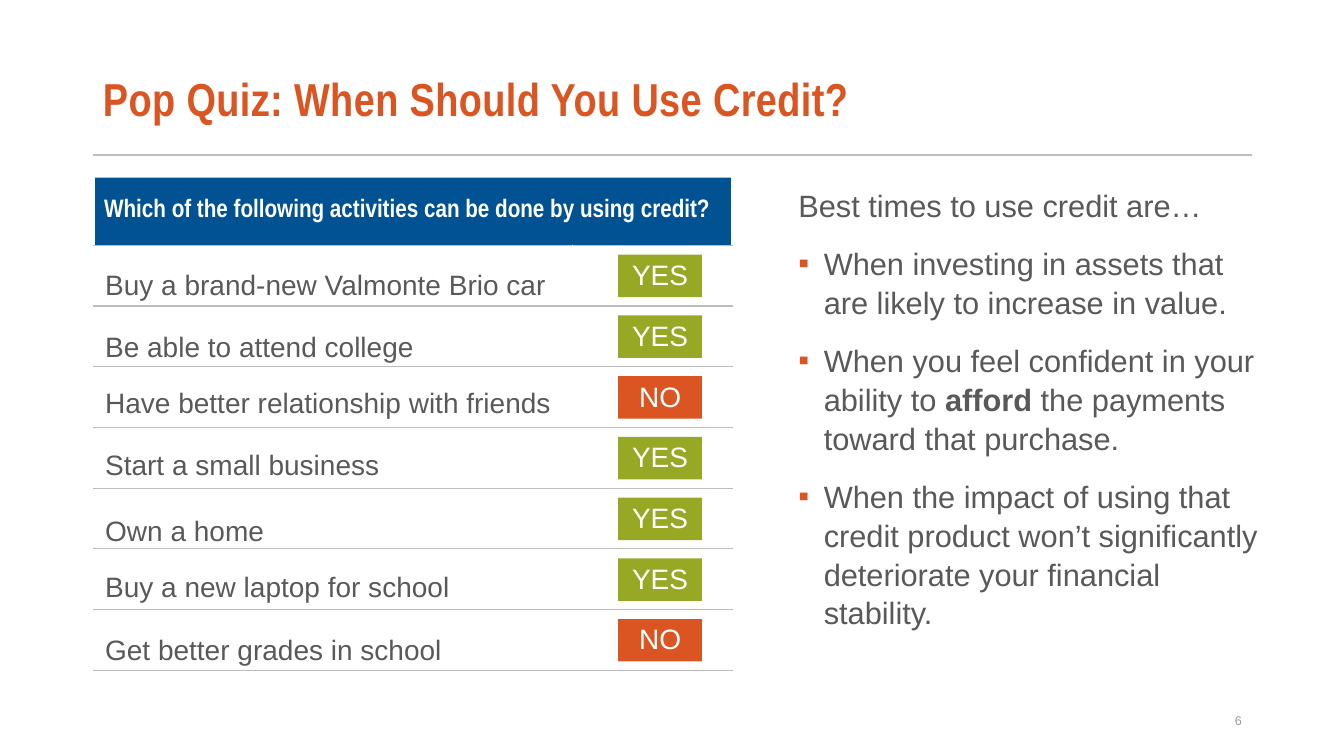
from collections import namedtuple

from lxml.etree import SubElement
from pptx import Presentation
from pptx.dml.color import RGBColor
from pptx.enum.shapes import MSO_CONNECTOR, MSO_SHAPE
from pptx.enum.text import MSO_ANCHOR, MSO_AUTO_SIZE, PP_ALIGN
from pptx.oxml.ns import qn
from pptx.util import Cm, Pt

ORANGE = RGBColor(0xDA, 0x55, 0x21)
GREEN = RGBColor(0x97, 0xA8, 0x25)
BLUE = RGBColor(0x00, 0x52, 0x93)
WHITE = RGBColor(0xFF, 0xFF, 0xFF)
TEXT_GRAY = RGBColor(0x59, 0x59, 0x59)
NUMBER_GRAY = RGBColor(0x9A, 0x9A, 0x9A)
LINE_GRAY = RGBColor(0xBD, 0xBD, 0xBD)

Box = namedtuple("Box", "left top width height")
Activity = namedtuple("Activity", "label answer drop")

TITLE_FONT = {"name": "Arial Narrow", "size": Pt(33), "bold": True}
HEADER_FONT = {"name": "Arial Narrow", "size": Pt(18), "bold": True}
LABEL_FONT = {"name": "Arial", "size": Pt(20)}
BODY_FONT = {"name": "Arial", "size": Pt(22)}
NUMBER_FONT = {"name": "Arial", "size": Pt(9)}

ANSWER_COLORS = {"YES": GREEN, "NO": ORANGE}
HEADER_HEIGHT = 1.71
ROW_HEIGHT = 1.53
QUESTION = "Which of the following activities can be done by using credit?"
ACTIVITIES = [
    Activity("Buy a brand-new Valmonte Brio car", "YES", 0.48),
    Activity("Be able to attend college", "YES", 0.53),
    Activity("Have better relationship with friends", "NO", 0.4),
    Activity("Start a small business", "YES", 0.44),
    Activity("Own a home", "YES", 0.56),
    Activity("Buy a new laptop for school", "YES", 0.45),
    Activity("Get better grades in school", "NO", 0.5),
]
BEST_TIMES = [
    ["When investing in assets that are likely to increase in value."],
    ["When you feel confident in your ability to ", "afford",
     " the payments toward that purchase."],
    ["When the impact of using that credit product won’t significantly "
     "deteriorate your financial stability."],
]


def set_values(target, values):
    """Set each named attribute of the target."""
    for name, value in values.items():
        setattr(target, name, value)


def lengths(box):
    """Give the sides of a box as slide lengths."""
    return [Cm(side) for side in box]


def move(shape, box):
    """Place a shape in a box."""
    set_values(shape, dict(zip(box._fields, lengths(box))))


def add_span(para, text, font, color):
    """Add formatted text to a paragraph."""
    span = para.add_run()
    span.text = text
    set_values(span.font, font)
    span.font.color.rgb = color
    return span


def add_label(page, box, text, font, color, **para_format):
    """Add a one-line text box."""
    frame = page.shapes.add_textbox(*lengths(box)).text_frame
    set_values(frame, {"word_wrap": True, "vertical_anchor": MSO_ANCHOR.MIDDLE})
    set_values(frame.paragraphs[0], para_format)
    add_span(frame.paragraphs[0], text, font, color)


def add_title(page, box):
    """Fill the title and draw the rule below it."""
    title = page.shapes.title
    move(title, box._replace(height=2.41))
    frame = title.text_frame
    set_values(frame, {"word_wrap": True, "auto_size": MSO_AUTO_SIZE.NONE,
                       "vertical_anchor": MSO_ANCHOR.MIDDLE})
    para = frame.paragraphs[0]
    set_values(para, {"alignment": PP_ALIGN.LEFT, "line_spacing": 0.87})
    span = add_span(para, "Pop Quiz: When Should You Use Credit?", TITLE_FONT, ORANGE)
    span.font._element.set("spc", "30")
    bottom = Cm(box.top + box.height)
    rule = page.shapes.add_connector(
        MSO_CONNECTOR.STRAIGHT, Cm(box.left), bottom, Cm(box.left + box.width), bottom)
    set_values(rule.line, {"width": Pt(1.5)})
    rule.line.color.rgb = LINE_GRAY
    SubElement(rule._element.spPr, qn("a:effectLst"))


def add_cell_borders(cell):
    """Draw thin lines above and below a cell."""
    properties = cell._tc.get_or_add_tcPr()
    for position, side in enumerate(("a:lnT", "a:lnB")):
        line = SubElement(properties, qn(side), w=str(Pt(1)))
        fill = SubElement(line, qn("a:solidFill"))
        SubElement(fill, qn("a:srgbClr"), val=str(LINE_GRAY))
        properties.insert(position, line)


def add_quiz_table(page, box):
    """Add the ruled table with its question header."""
    table = page.shapes.add_table(len(ACTIVITIES) + 1, 2, *lengths(box)).table
    table.horz_banding = False
    for column, share in zip(table.columns, (0.75, 0.25)):
        column.width = Cm(box.width * share)
    for row in table.rows:
        row.height = Cm(ROW_HEIGHT)
    table.rows[0].height = Cm(HEADER_HEIGHT)
    for cell in table.iter_cells():
        cell.fill.background()
        add_cell_borders(cell)
    header = table.cell(0, 0)
    header.merge(table.cell(0, 1))
    header.fill.solid()
    header.fill.fore_color.rgb = BLUE
    header.vertical_anchor = MSO_ANCHOR.MIDDLE
    add_span(header.text_frame.paragraphs[0], QUESTION, HEADER_FONT, WHITE)


def add_badge(page, box, answer):
    """Add a coloured answer badge."""
    badge = page.shapes.add_shape(MSO_SHAPE.RECTANGLE, *lengths(box))
    badge.shadow.inherit = False
    badge.fill.solid()
    badge.fill.fore_color.rgb = ANSWER_COLORS[answer]
    badge.line.fill.background()
    para = badge.text_frame.paragraphs[0]
    set_values(para, {"alignment": PP_ALIGN.CENTER, "line_spacing": 0.95})
    add_span(para, answer, LABEL_FONT, WHITE)


def add_quiz(page, box):
    """Add the table, its activities and their answers."""
    add_quiz_table(page, box)
    for index, activity in enumerate(ACTIVITIES):
        row_top = box.top + HEADER_HEIGHT + index * ROW_HEIGHT
        label_box = Box(box.left + 0.03, row_top + activity.drop, 13, 1.07)
        add_label(page, label_box, activity.label, LABEL_FONT, TEXT_GRAY, line_spacing=0.95)
        badge_box = Box(box.left + 13.21, row_top + 0.24, 2.11, 1.07)
        add_badge(page, badge_box, activity.answer)


def set_bullet(para, symbol=None):
    """Give a paragraph a hanging orange bullet, or none."""
    properties = para._p.get_or_add_pPr()
    indent = Cm(0.64) if symbol else 0
    properties.set("marL", str(indent))
    properties.set("indent", str(-indent))
    if symbol:
        color = SubElement(properties, qn("a:buClr"))
        SubElement(color, qn("a:srgbClr"), val=str(ORANGE))
        SubElement(properties, qn("a:buFont"), typeface="Arial")
        SubElement(properties, qn("a:buChar"), char=symbol)
    else:
        SubElement(properties, qn("a:buNone"))


def add_best_times(page, box):
    """Fill the body with the lead-in and the bulleted advice."""
    body = page.placeholders[1]
    move(body, box)
    frame = body.text_frame
    set_values(frame, {"word_wrap": True, "auto_size": MSO_AUTO_SIZE.NONE, "margin_left": 0})
    lead = frame.paragraphs[0]
    set_bullet(lead)
    set_values(lead, {"line_spacing": 1.05, "space_before": Pt(0)})
    add_span(lead, "Best times to use credit are…", BODY_FONT, TEXT_GRAY)
    for parts in BEST_TIMES:
        para = frame.add_paragraph()
        set_bullet(para, "▪")
        set_values(para, {"line_spacing": 1.05, "space_before": Pt(14)})
        for part in parts:
            span = add_span(para, part, BODY_FONT, TEXT_GRAY)
            span.font.bold = part == "afford"


def main():
    """Build and save the slide."""
    deck = Presentation()
    set_values(deck, {"slide_width": Cm(33.87), "slide_height": Cm(19.05)})
    page = deck.slides.add_slide(deck.slide_layouts[1])
    add_title(page, Box(2.34, 1.37, 29.21, 2.54))
    add_quiz(page, Box(2.37, 4.47, 16.08, 12.42))
    add_best_times(page, Box(20.12, 4.52, 12.04, 13.64))
    add_label(page, Box(23.93, 17.65, 7.62, 1.02), "6", NUMBER_FONT, NUMBER_GRAY,
              alignment=PP_ALIGN.RIGHT)
    deck.save("out.pptx")


if __name__ == "__main__":
    main()
